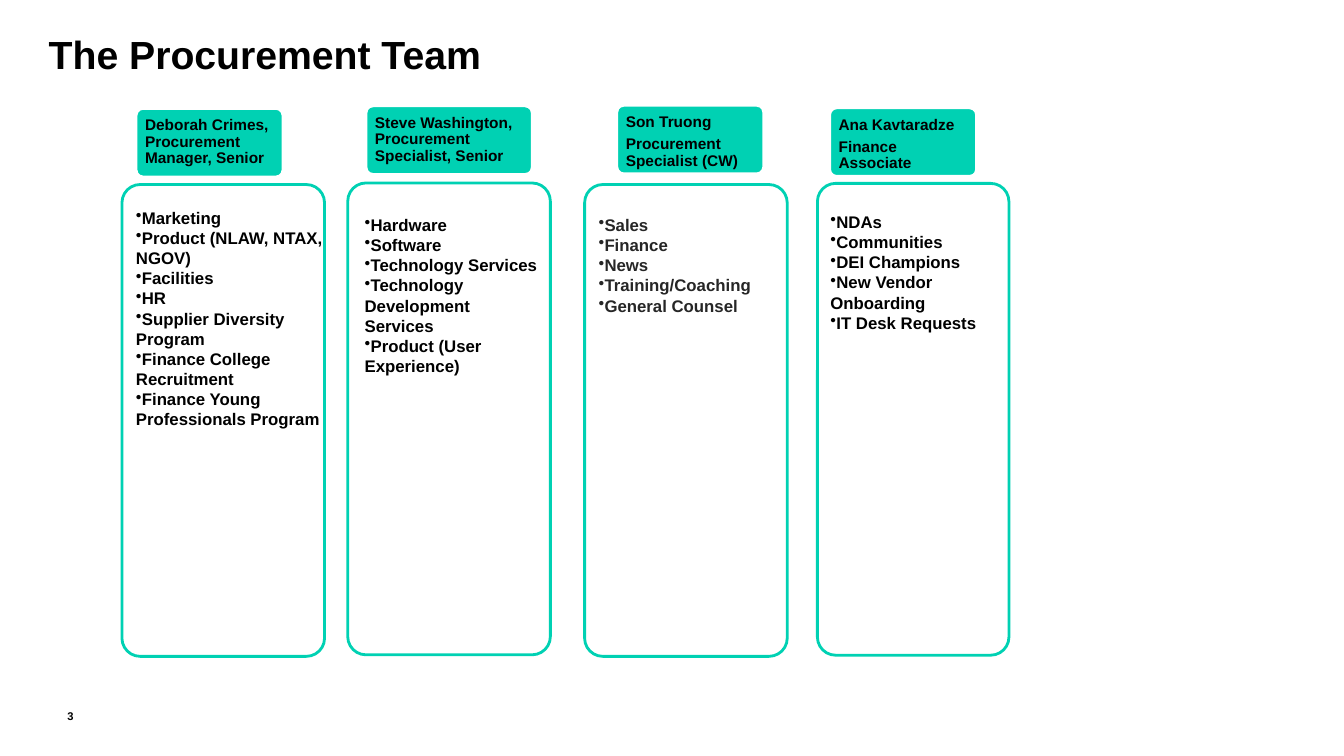
from lxml import etree
from pptx import Presentation
from pptx.dml.color import RGBColor
from pptx.enum import shapes, text
from pptx.oxml import ns
from pptx.util import Pt

TEAL = RGBColor(0x00, 0xD1, 0xB3)
WHITE = RGBColor(0xFF, 0xFF, 0xFF)
BLACK = RGBColor(0x00, 0x00, 0x00)
DARK_GREY = RGBColor(0x26, 0x26, 0x26)

# Each box is left, top, width, height in points.
MEMBERS = [
    {
        "header": ["Deborah Crimes, Procurement Manager, Senior"],
        "header_box": (97.2, 77.4, 105, 49),
        "column_box": (87.1, 131.8, 144.7, 337),
        "list_box": (90, 144.7, 147.6, 167),
        "color": BLACK,
        "areas": ["Marketing", "Product (NLAW, NTAX, NGOV)", "Facilities", "HR",
                  "Supplier Diversity Program", "Finance College Recruitment",
                  "Finance Young Professionals Program"],
    },
    {
        "header": ["Steve Washington, Procurement Specialist, Senior"],
        "header_box": (261.4, 75.6, 118.8, 49),
        "column_box": (248.4, 130.7, 144.7, 337),
        "list_box": (253.4, 149.8, 139.7, 124),
        "color": BLACK,
        "areas": ["Hardware", "Software", "Technology Services",
                  "Technology Development Services", "Product (User Experience)"],
    },
    {
        "header": ["Son Truong", "Procurement Specialist (CW)"],
        "header_box": (440.6, 75.2, 105, 49),
        "column_box": (417.6, 131.8, 144.7, 337),
        "list_box": (420.5, 149.8, 149, 94),
        "color": DARK_GREY,
        "areas": ["Sales", "Finance", "News", "Training/Coaching", "General Counsel"],
    },
    {
        "header": ["Ana Kavtaradze", "Finance Associate"],
        "header_box": (592.6, 77, 105, 49),
        "column_box": (583.9, 131, 136.8, 337),
        "list_box": (586.1, 147.6, 123.1, 109),
        "color": BLACK,
        "areas": ["NDAs", "Communities", "DEI Champions", "New Vendor Onboarding",
                  "IT Desk Requests"],
    },
]


def add_rounded_box(box, radius, fill, line):
    shape = slide.shapes.add_shape(
        shapes.MSO_SHAPE.ROUNDED_RECTANGLE, *[Pt(length) for length in box])
    shape.adjustments[0] = radius / min(box[2:])
    shape.shadow.inherit = False
    shape.fill.solid()
    shape.fill.fore_color.rgb = fill
    shape.line.color.rgb = line
    shape.line.width = Pt(2)
    return shape


def write(shape, lines, size, color, margins):
    """Fill a shape with bold, top-left text; margins are left, top, right, bottom."""
    frame = shape.text_frame
    frame.text = "\n".join(lines)
    frame.word_wrap = True
    frame.auto_size = text.MSO_AUTO_SIZE.NONE
    frame.vertical_anchor = text.MSO_ANCHOR.TOP
    (frame.margin_left, frame.margin_top,
     frame.margin_right, frame.margin_bottom) = [Pt(margin) for margin in margins]
    for paragraph in frame.paragraphs:
        paragraph.alignment = text.PP_ALIGN.LEFT
        font = paragraph.runs[0].font
        font.name = "Arial"
        font.size = Pt(size)
        font.bold = True
        font.color.rgb = color
    return frame


presentation = Presentation()
presentation.slide_width = Pt(960)
presentation.slide_height = Pt(540)
slide = presentation.slides.add_slide(presentation.slide_layouts[5])

title = slide.shapes.title
title.left, title.top, title.width, title.height = Pt(34.8), Pt(21.6), Pt(407), Pt(44.6)
write(title, ["The Procurement Team"], 28, BLACK, (0, 0, 0, 0))

for member in MEMBERS:
    header = add_rounded_box(member["header_box"], 5, TEAL, WHITE)
    header_frame = write(header, member["header"], 11, BLACK, (5, 5, 5, 0))
    for paragraph in header_frame.paragraphs:
        paragraph.line_spacing = 0.9
        paragraph.space_after = Pt(4)

    add_rounded_box(member["column_box"], 13, WHITE, TEAL)

    area_list = slide.shapes.add_textbox(*[Pt(length) for length in member["list_box"]])
    list_frame = write(area_list, member["areas"], 12, member["color"], (7.2, 3.6, 7.2, 3.6))
    for paragraph in list_frame.paragraphs:
        properties = paragraph._p.get_or_add_pPr()
        properties.set("marL", "0")
        properties.set("indent", "0")
        etree.SubElement(properties, ns.qn("a:buChar")).set("char", "•")

page_number = slide.shapes.add_textbox(Pt(48.2), Pt(503.3), Pt(21.6), Pt(16.6))
number_frame = write(page_number, ["3"], 8, BLACK, (0, 3.6, 7.2, 3.6))
number_frame.vertical_anchor = text.MSO_ANCHOR.MIDDLE

presentation.save("out.pptx")
